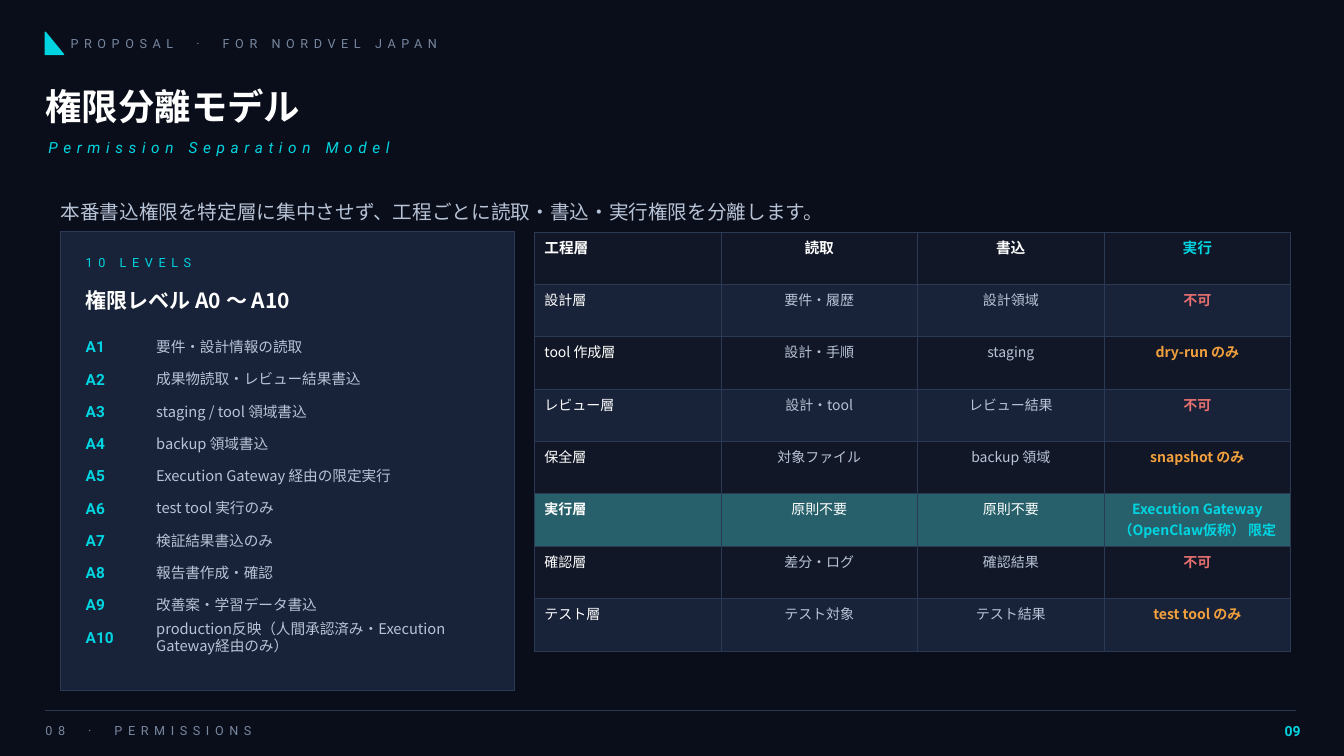
from lxml import etree
from pptx import Presentation
from pptx.dml.color import RGBColor
from pptx.enum.shapes import MSO_CONNECTOR, MSO_SHAPE
from pptx.enum.text import MSO_ANCHOR, MSO_AUTO_SIZE, PP_ALIGN
from pptx.oxml import parse_xml
from pptx.oxml.ns import nsdecls, qn
from pptx.util import Inches, Pt

LEFT, CENTER, RIGHT = PP_ALIGN.LEFT, PP_ALIGN.CENTER, PP_ALIGN.RIGHT
MIDDLE = MSO_ANCHOR.MIDDLE
NO_FIT = MSO_AUTO_SIZE.NONE
TRIANGLE, RECTANGLE = MSO_SHAPE.RIGHT_TRIANGLE, MSO_SHAPE.RECTANGLE
STRAIGHT = MSO_CONNECTOR.STRAIGHT

JAPANESE, LATIN = "Noto Sans CJK JP", "Roboto"
NIGHT, DARK, PANEL, TEAL = "0A0E1A", "111726", "182238", "27606A"
CYAN, WHITE, PALE, GRAY = "00D4E0", "FFFFFF", "B7C3D6", "7787A0"
RED, ORANGE, EDGE = "E66F6F", "F2A03E", "2A3A55"

# Content
TITLE = "権限分離モデル"
# text, place, font, size, colour, further format
LABELS = [
    ("PROPOSAL  ·  FOR NORDVEL JAPAN", (0.7, 0.27, 6, 0.32), LATIN, 9, GRAY, {"spacing": 4}),
    ("Permission Separation Model", (0.48, 1.3, 12, 0.32), LATIN, 11, CYAN,
     {"spacing": 4, "italic": True}),
    ("本番書込権限を特定層に集中させず、工程ごとに読取・書込・実行権限を分離します。",
     (0.6, 1.85, 12.2, 0.5), JAPANESE, 14, PALE, {}),
    ("10 LEVELS", (0.85, 2.45, 3, 0.3), LATIN, 9, CYAN, {"spacing": 4}),
    ("権限レベル A0 〜 A10", (0.85, 2.75, 4.1, 0.45), JAPANESE, 15, WHITE, {"bold": True}),
    ("08  ·  PERMISSIONS", (0.45, 7.1, 9, 0.3), LATIN, 9, GRAY, {"spacing": 4}),
    ("09", (12.45, 7.1, 0.45, 0.3), LATIN, 10, CYAN, {"bold": True, "align": RIGHT}),
]
LEVELS = [
    "要件・設計情報の読取",
    "成果物読取・レビュー結果書込",
    "staging / tool 領域書込",
    "backup 領域書込",
    "Execution Gateway 経由の限定実行",
    "test tool 実行のみ",
    "検証結果書込のみ",
    "報告書作成・確認",
    "改善案・学習データ書込",
    "production反映（人間承認済み・Execution Gateway経由のみ）",
]
HEADER = ("工程層", "読取", "書込", "実行")
LAYERS = [
    ("設計層", "要件・履歴", "設計領域", "不可"),
    ("tool 作成層", "設計・手順", "staging", "dry-run のみ"),
    ("レビュー層", "設計・tool", "レビュー結果", "不可"),
    ("保全層", "対象ファイル", "backup 領域", "snapshot のみ"),
    ("実行層", "原則不要", "原則不要", "Execution Gateway（OpenClaw仮称） 限定"),
    ("確認層", "差分・ログ", "確認結果", "不可"),
    ("テスト層", "テスト対象", "テスト結果", "test tool のみ"),
]
HIGHLIGHT = "実行層"
COLUMN_WIDTHS = (1.85, 1.95, 1.85, 1.85)
ROW_HEIGHT = 0.52
LEVEL_TOP, LEVEL_STEP = 3.3, 0.32


def color(value):
    return RGBColor.from_string(value)


def inches(place):
    return [Inches(length) for length in place]


def write(frame, text, font, size, tint, bold=False, italic=False, spacing=0, align=LEFT):
    para = frame.paragraphs[0]
    para.alignment = align
    span = para.add_run()
    span.text = text
    span.font.size = Pt(size)
    span.font.bold = bold
    span.font.italic = italic
    span.font.color.rgb = color(tint)
    span.font.name = font
    properties = span.font._element
    etree.SubElement(properties, qn("a:ea")).set("typeface", font)
    if spacing:
        properties.set("spc", str(spacing * 100))


def set_frame(frame):
    frame.word_wrap = True
    frame.auto_size = NO_FIT
    frame.vertical_anchor = MIDDLE
    frame.margin_left = frame.margin_right = 0
    frame.margin_top = frame.margin_bottom = 0


def add_label(page, text, place, font, size, tint, **style):
    box = page.shapes.add_textbox(*inches(place))
    set_frame(box.text_frame)
    write(box.text_frame, text, font, size, tint, **style)


def add_block(page, kind, place, fill, line, width):
    block = page.shapes.add_shape(kind, *inches(place))
    block.shadow.inherit = False
    block.fill.solid()
    block.fill.fore_color.rgb = color(fill)
    block.line.color.rgb = color(line)
    block.line.width = Pt(width)


def paint_cell(cell, fill):
    properties = cell._tc.get_or_add_tcPr()
    for side in ("lnL", "lnR", "lnT", "lnB"):
        properties.append(parse_xml(
            f'<a:{side} {nsdecls("a")} w="{Pt(0.5)}"><a:solidFill>'
            f'<a:srgbClr val="{EDGE}"/></a:solidFill></a:{side}>'))
    cell.fill.solid()
    cell.fill.fore_color.rgb = color(fill)


def cell_style(row, column, record):
    """Return the size, colour and weight of a cell's text."""
    if row == 0:
        return 10.5, CYAN if column == 3 else WHITE, True
    marked = record[0] == HIGHLIGHT
    if column == 0:
        return 10, WHITE, marked
    if column < 3:
        return 10, WHITE if marked else PALE, False
    if marked:
        return 10, CYAN, True
    return 10, RED if record[3] == "不可" else ORANGE, True


def add_permission_table(page):
    records = [HEADER] + LAYERS
    place = (5.3, 2.3, sum(COLUMN_WIDTHS), ROW_HEIGHT * len(records))
    table = page.shapes.add_table(len(records), len(HEADER), *inches(place)).table
    table.first_row = table.horz_banding = False
    for column, width in enumerate(COLUMN_WIDTHS):
        table.columns[column].width = Inches(width)
    for row, record in enumerate(records):
        table.rows[row].height = Inches(ROW_HEIGHT)
        fill = TEAL if record[0] == HIGHLIGHT else (DARK, PANEL)[row % 2]
        for column, text in enumerate(record):
            cell = table.cell(row, column)
            paint_cell(cell, fill)
            size, tint, bold = cell_style(row, column, record)
            write(cell.text_frame, text, JAPANESE, size, tint, bold=bold,
                  align=CENTER if column else LEFT)


def main():
    deck = Presentation()
    deck.slide_width, deck.slide_height = Inches(13.33), Inches(7.5)
    page = deck.slides.add_slide(deck.slide_layouts[5])
    page.background.fill.solid()
    page.background.fill.fore_color.rgb = color(NIGHT)

    # Title
    title = page.shapes.title
    title.left, title.top, title.width, title.height = inches((0.45, 0.75, 12, 0.6))
    set_frame(title.text_frame)
    write(title.text_frame, TITLE, JAPANESE, 26, WHITE, bold=True)

    # Corner mark, level panel and labels
    add_block(page, TRIANGLE, (0.45, 0.32, 0.18, 0.22), CYAN, CYAN, 1)
    add_block(page, RECTANGLE, (0.6, 2.3, 4.5, 4.55), PANEL, EDGE, 0.75)
    for text, place, font, size, tint, style in LABELS:
        add_label(page, text, place, font, size, tint, **style)

    # Permission levels
    for index, meaning in enumerate(LEVELS):
        top = LEVEL_TOP + index * LEVEL_STEP
        add_label(page, f"A{index + 1}", (0.85, top, 0.6, 0.28), LATIN, 11, CYAN, bold=True)
        add_label(page, meaning, (1.55, top, 3.4, 0.28), JAPANESE, 10.5, PALE)

    add_permission_table(page)

    # Footer rule
    rule = page.shapes.add_connector(STRAIGHT, *inches((0.45, 7.05, 12.85, 7.05)))
    rule.line.color.rgb = color(EDGE)
    rule.line.width = Pt(0.6)
    etree.SubElement(rule._element.spPr, qn("a:effectLst"))

    deck.save("out.pptx")


if __name__ == "__main__":
    main()
